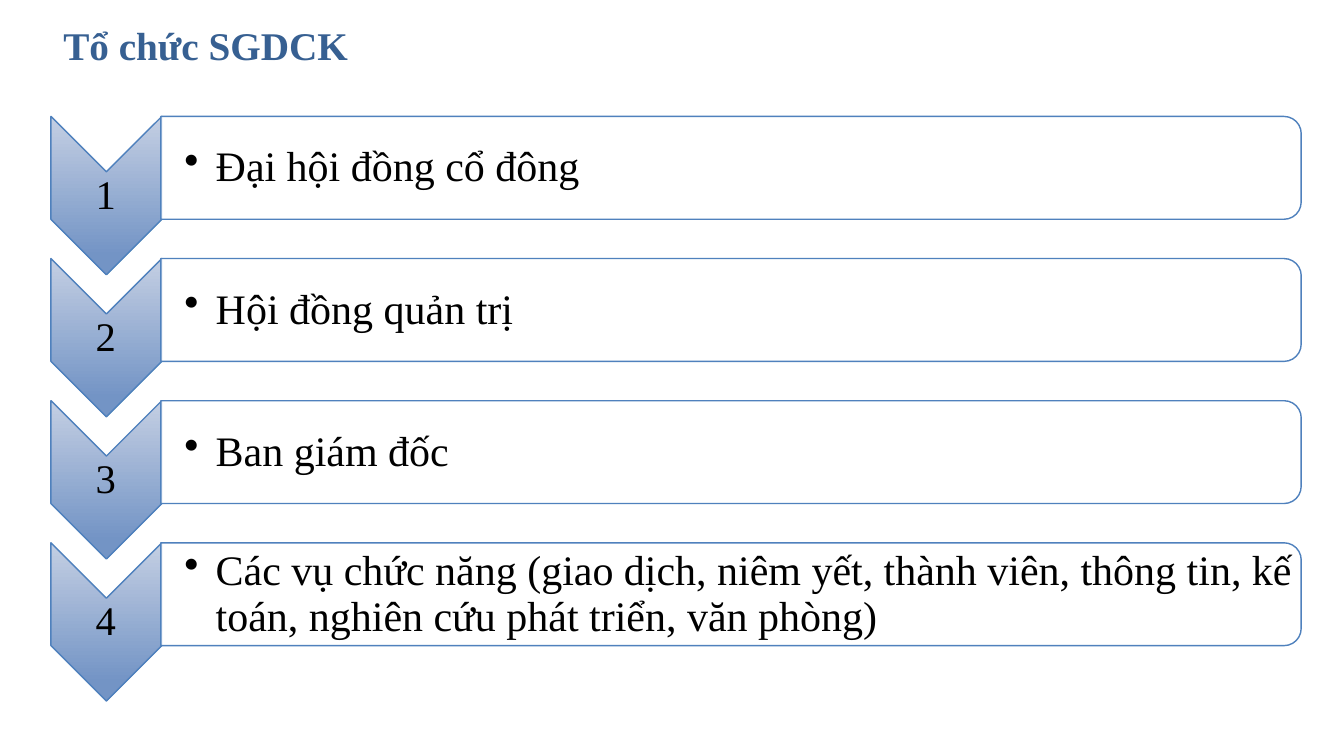
from dataclasses import dataclass
from lxml.etree import SubElement as Sub
from pptx import Presentation
from pptx.dml.color import RGBColor as Rgb
from pptx.enum.shapes import MSO_SHAPE as Kind
from pptx.enum.text import MSO_ANCHOR as Anchor, PP_ALIGN as Align
from pptx.oxml.ns import qn
from pptx.shapes.autoshape import Shape
from pptx.slide import Slide
from pptx.util import Inches, Pt

FONT = "Times New Roman"
EDGE = "4F81BD"
PITCH = 1.41


@dataclass
class Box:
    left: float
    top: float
    width: float
    height: float

    def down(self, gap: float) -> "Box":
        return Box(self.left, self.top + gap, self.width, self.height)

    def size(self) -> list[int]:
        return [Inches(v) for v in (self.left, self.top, self.width, self.height)]


@dataclass
class Step:
    label: str
    body: str


ARROW = Box(0.27, 1.39, 1.57, 1.1)
DIGIT = Box(0.5, 1.71, 1.1, 0.47)
PANEL = Box(6.74, -3.99, 1.02, 11.31)
BODY = Box(1.6, 1.21, 11.26, 0.92)

STEPS = [
    Step("1", "Đại hội đồng cổ đông"),
    Step("2", "Hội đồng quản trị"),
    Step("3", "Ban giám đốc"),
    Step("4", "Các vụ chức năng (giao dịch, niêm yết, thành viên, thông tin, "
              "kế toán, nghiên cứu phát triển, văn phòng)"),
]


def color(code: str) -> Rgb:
    return Rgb.from_string(code)


def text(slide: Slide, box: Box, words: str, *, size: float, ink: str = "000000",
         bold: bool = False, align: Align = Align.LEFT, left: float = 0.02,
         inset: float = 0.02, space: float = 0.9, bullet: bool = False) -> None:
    frame = slide.shapes.add_textbox(*box.size()).text_frame
    frame.word_wrap = True
    frame.vertical_anchor = Anchor.MIDDLE
    frame.margin_left = Inches(left)
    frame.margin_top = frame.margin_right = frame.margin_bottom = Inches(inset)
    para = frame.paragraphs[0]
    para.alignment = align
    para.line_spacing = space
    if bullet:
        props = para._p.get_or_add_pPr()
        props.set("marL", str(Inches(0.31)))
        props.set("indent", str(Inches(-0.31)))
        Sub(props, qn("a:buChar")).set("char", "•")
    run = para.add_run()
    run.text = words
    run.font.name = FONT
    run.font.size = Pt(size)
    run.font.bold = bold
    run.font.color.rgb = color(ink)


def turned(slide: Slide, kind: Kind, box: Box) -> Shape:
    shape = slide.shapes.add_shape(kind, *box.size())
    shape.rotation = 90
    shape.shadow.inherit = False
    shape.line.color.rgb = color(EDGE)
    shape.line.width = Pt(1)
    return shape


def arrow(slide: Slide, box: Box) -> None:
    shape = turned(slide, Kind.CHEVRON, box)
    shape.fill.gradient()
    shape.fill.gradient_angle = 270
    stops = [(0, "C4CFE3"), (0.88, "7394C5")]
    for stop, (place, code) in zip(shape.fill.gradient_stops, stops):
        stop.position = place
        stop.color.rgb = color(code)
    shape._element.spPr.find(qn("a:gradFill")).set("rotWithShape", "0")


def panel(slide: Slide, box: Box) -> None:
    shape = turned(slide, Kind.ROUND_2_SAME_RECTANGLE, box)
    shape.fill.solid()
    shape.fill.fore_color.rgb = color("FFFFFF")
    tone = shape._element.spPr.find(qn("a:solidFill")).find(qn("a:srgbClr"))
    Sub(tone, qn("a:alpha")).set("val", "90000")


def main() -> None:
    deck = Presentation()
    deck.slide_width = Inches(13.33)
    deck.slide_height = Inches(7.5)
    slide = deck.slides.add_slide(deck.slide_layouts[6])
    text(slide, Box(0.53, 0.03, 12.53, 0.83), "Tổ chức SGDCK", size=28,
         ink="376092", bold=True, left=0.1, inset=0.05, space=1.0)
    for index, step in enumerate(STEPS):
        gap = index * PITCH
        arrow(slide, ARROW.down(gap))
        text(slide, DIGIT.down(gap), step.label, size=29, align=Align.CENTER)
        panel(slide, PANEL.down(gap))
        text(slide, BODY.down(gap), step.body, size=30, left=0.23, bullet=True)
    deck.save("out.pptx")


if __name__ == "__main__":
    main()
